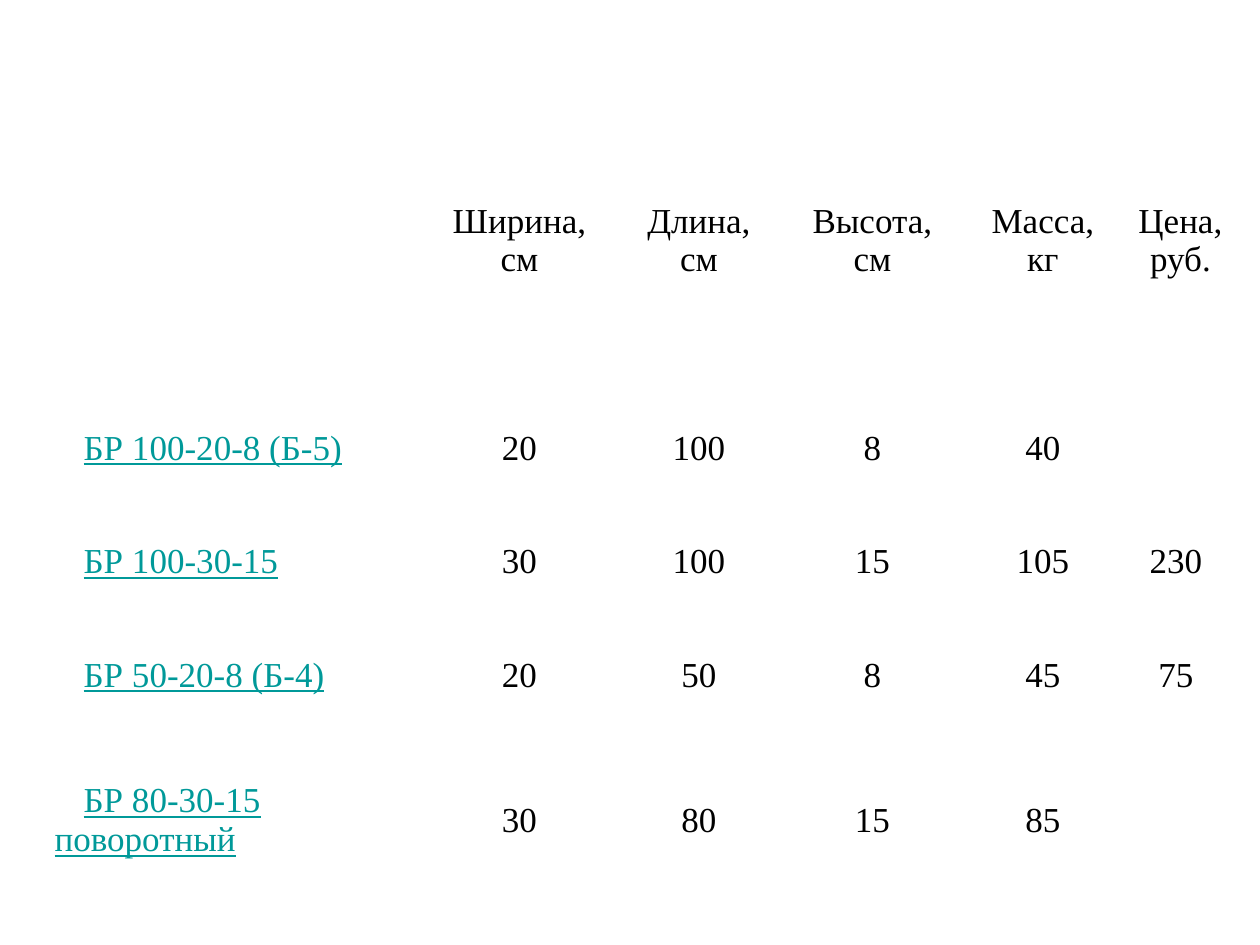
from dataclasses import dataclass

from pptx import Presentation
from pptx import util as u
from pptx.dml.color import RGBColor
from pptx.enum import text

PX = u.Inches(1) / 126


@dataclass(frozen=True)
class Theme:
    ink: str = "000000"
    link: str = "009999"
    font: str = "Times New Roman"
    size: int = 20


THEME = Theme()
SLIDE = (1260, 945)
TABLE_AT = (42, 105)
COLUMNS = [381, 193, 166, 181, 160, 115]
ROWS = [271, 145, 82, 145, 145]
NAME_INDENT = 29

BLOCKS = [
    ("", "Ширина, см", "Длина, см", "Высота, см", "Масса, кг", "Цена, руб."),
    ("БР 100-20-8 (Б-5)", "20", "100", "8", "40", ""),
    ("БР 100-30-15", "30", "100", "15", "105", "230 "),
    ("БР 50-20-8 (Б-4)", "20", "50", "8", "45", "75 "),
    ("БР 80-30-15 поворотный", "30", "80", "15", "85", ""),
]


def px(n):
    return u.Emu(round(n * PX))


def write(cell, words, color=THEME.ink, align=text.PP_ALIGN.CENTER,
          underline=False, indent=0):
    cell.fill.background()
    cell.vertical_anchor = text.MSO_ANCHOR.MIDDLE
    p = cell.text_frame.paragraphs[0]
    p.alignment = align
    if indent:
        pPr = p._p.get_or_add_pPr()
        pPr.set("marL", "0")
        pPr.set("indent", str(px(indent)))
    if words:
        r = p.add_run()
        r.text = words
        r.font.name = THEME.font
        r.font.size = u.Pt(THEME.size)
        r.font.underline = underline
        r.font.color.rgb = RGBColor.from_string(color)


def main():
    prs = Presentation()
    prs.slide_width, prs.slide_height = map(px, SLIDE)
    s = prs.slides.add_slide(prs.slide_layouts[6])
    frame = s.shapes.add_table(
        len(ROWS), len(COLUMNS), *map(px, TABLE_AT),
        px(sum(COLUMNS)), px(sum(ROWS)))
    table = frame.table
    table.first_row = table.horz_banding = False
    for column, width in zip(table.columns, COLUMNS):
        column.width = px(width)
    for row, height in zip(table.rows, ROWS):
        row.height = px(height)

    name_format = dict(color=THEME.link, align=text.PP_ALIGN.LEFT,
                       underline=True, indent=NAME_INDENT)
    for i, block in enumerate(BLOCKS):
        for j, words in enumerate(block):
            write(table.cell(i, j), words, **(name_format if j == 0 else {}))
    prs.save("out.pptx")


if __name__ == "__main__":
    main()
